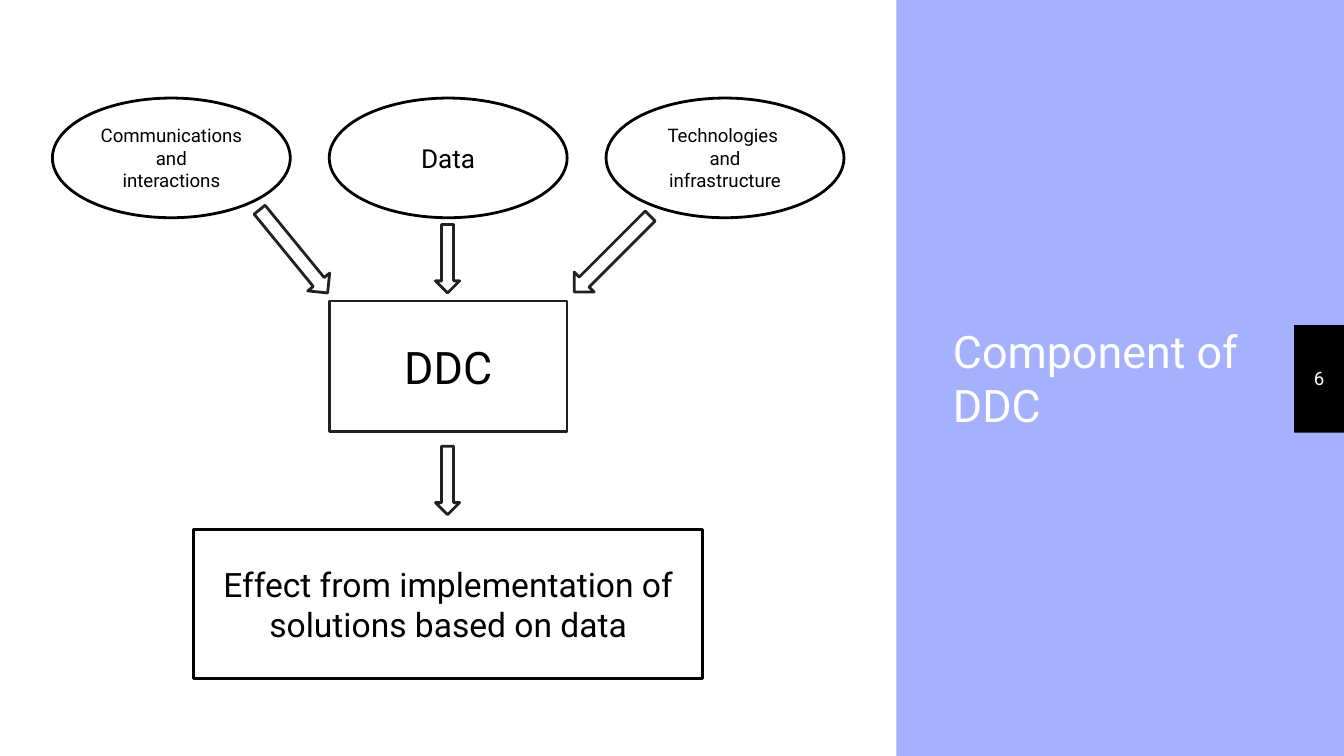
"""Build the slide on the components of DDC."""
from lxml.etree import SubElement
from pptx import Presentation
from pptx.dml.color import RGBColor
from pptx.enum.shapes import MSO_SHAPE
from pptx.enum.text import MSO_ANCHOR, MSO_AUTO_SIZE, PP_ALIGN
from pptx.oxml.ns import qn
from pptx.util import Inches, Pt

LAVENDER = RGBColor(0xA5, 0xB0, 0xFE)
WHITE = RGBColor(0xFF, 0xFF, 0xFF)
BLACK = RGBColor(0, 0, 0)
CHARCOAL = RGBColor(0x21, 0x21, 0x21)


def add_block(kind, left, top, width, height, fill, line=None):
    block = page.shapes.add_shape(
        kind, Inches(left), Inches(top), Inches(width), Inches(height))
    block.shadow.inherit = False
    block.fill.solid()
    block.fill.fore_color.rgb = fill
    if line is None:
        block.line.fill.background()
    else:
        block.line.color.rgb = line
        block.line.width = Pt(1.5)
    return block


def write_text(shape, text, size, color, align=PP_ALIGN.CENTER):
    frame = shape.text_frame
    frame.text = text
    frame.word_wrap = True
    frame.auto_size = MSO_AUTO_SIZE.NONE
    frame.vertical_anchor = MSO_ANCHOR.MIDDLE
    frame.margin_left = frame.margin_right = Inches(0.1)
    frame.margin_top = frame.margin_bottom = Inches(0.1)
    for para in frame.paragraphs:
        para.alignment = align
        for span in para.runs:
            span.font.name = "Roboto"
            span.font.size = Pt(size)
            span.font.color.rgb = color


deck = Presentation()
deck.slide_width = Inches(10)
deck.slide_height = deck.slide_width * 9 // 16
page = deck.slides.add_slide(deck.slide_layouts[5])
page.background.fill.solid()
page.background.fill.fore_color.rgb = LAVENDER

add_block(MSO_SHAPE.RECTANGLE, 9.63, 2.42, 0.37, 0.8, BLACK)
panel = add_block(MSO_SHAPE.RECTANGLE, 0, 0, 6.67, 5.62, WHITE)
panel.height = deck.slide_height

number_box = page.shapes.add_textbox(
    Inches(9.63), Inches(2.41), Inches(0.37), Inches(0.8))
write_text(number_box, "6", 10, WHITE)

title = page.shapes.title
title.left, title.top = Inches(6.99), Inches(0.48)
title.width, title.height = Inches(2.32), Inches(4.66)
write_text(title, "Component of DDC", 24, WHITE, PP_ALIGN.LEFT)
title.text_frame.paragraphs[0].space_before = Pt(3.6)

nodes = [
    (MSO_SHAPE.RECTANGLE, 2.45, 2.24, 1.77, 0.97, CHARCOAL, "DDC", 24),
    (MSO_SHAPE.RECTANGLE, 1.44, 3.94, 3.79, 1.11, BLACK,
     "Effect from implementation of solutions based on data", 18),
]
inputs = [
    ("Communications\nand\ninteractions", 10),
    ("Data", 14),
    ("Technologies \nand\ninfrastructure", 10),
]
for column, (text, size) in enumerate(inputs):
    nodes.append((MSO_SHAPE.OVAL, 0.39 + 2.06 * column, 0.73, 1.77, 0.89,
                  BLACK, text, size))

for kind, left, top, width, height, line, text, size in nodes:
    node = add_block(kind, left, top, width, height, WHITE, line)
    color = node.fill._xPr.find(qn("a:solidFill"))[0]
    SubElement(color, qn("a:alpha"), val="63000")
    write_text(node, text, size, BLACK)

arrows = [
    (2.08, 1.47, 0.21, 0.8, 320.7),
    (3.24, 1.67, 0.18, 0.51, 0),
    (4.45, 1.49, 0.21, 0.8, 45),
    (3.24, 3.32, 0.18, 0.51, 0),
]
for left, top, width, height, angle in arrows:
    arrow = add_block(MSO_SHAPE.DOWN_ARROW, left, top, width, height,
                      WHITE, CHARCOAL)
    arrow.rotation = angle

deck.save("out.pptx")
